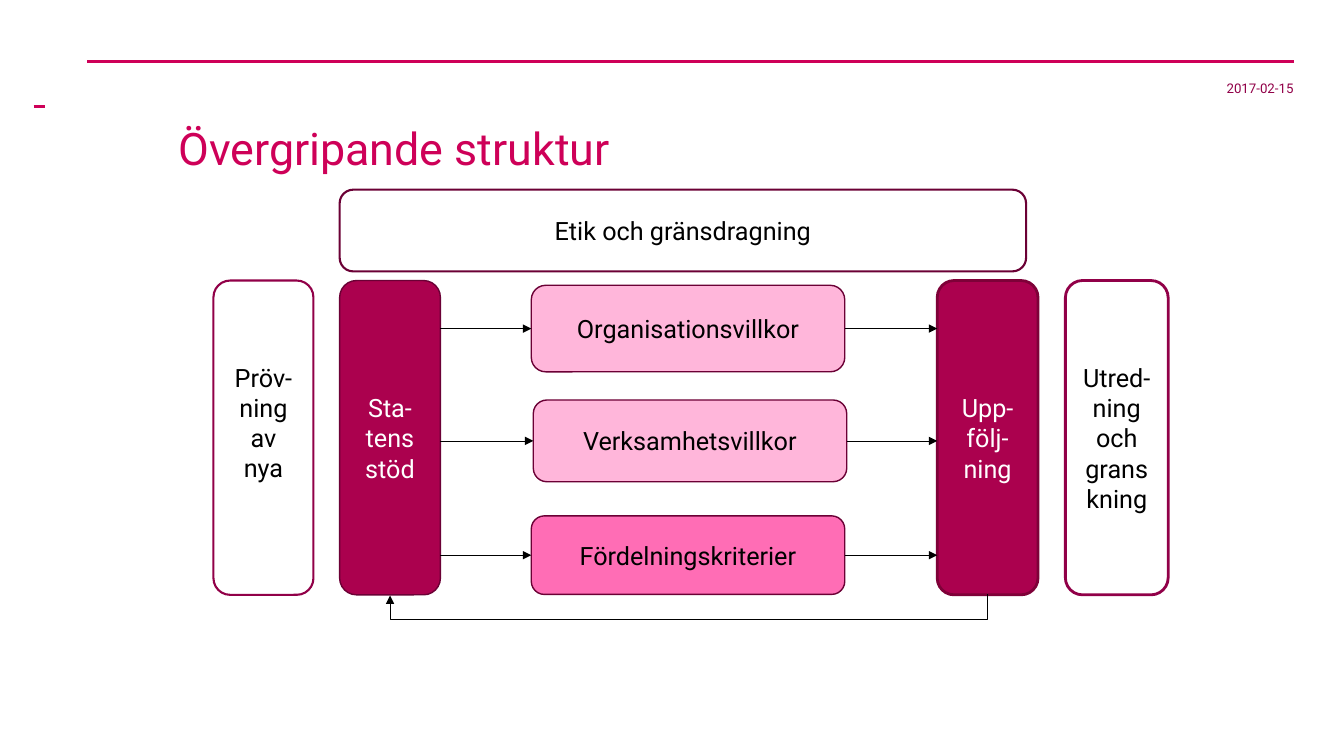
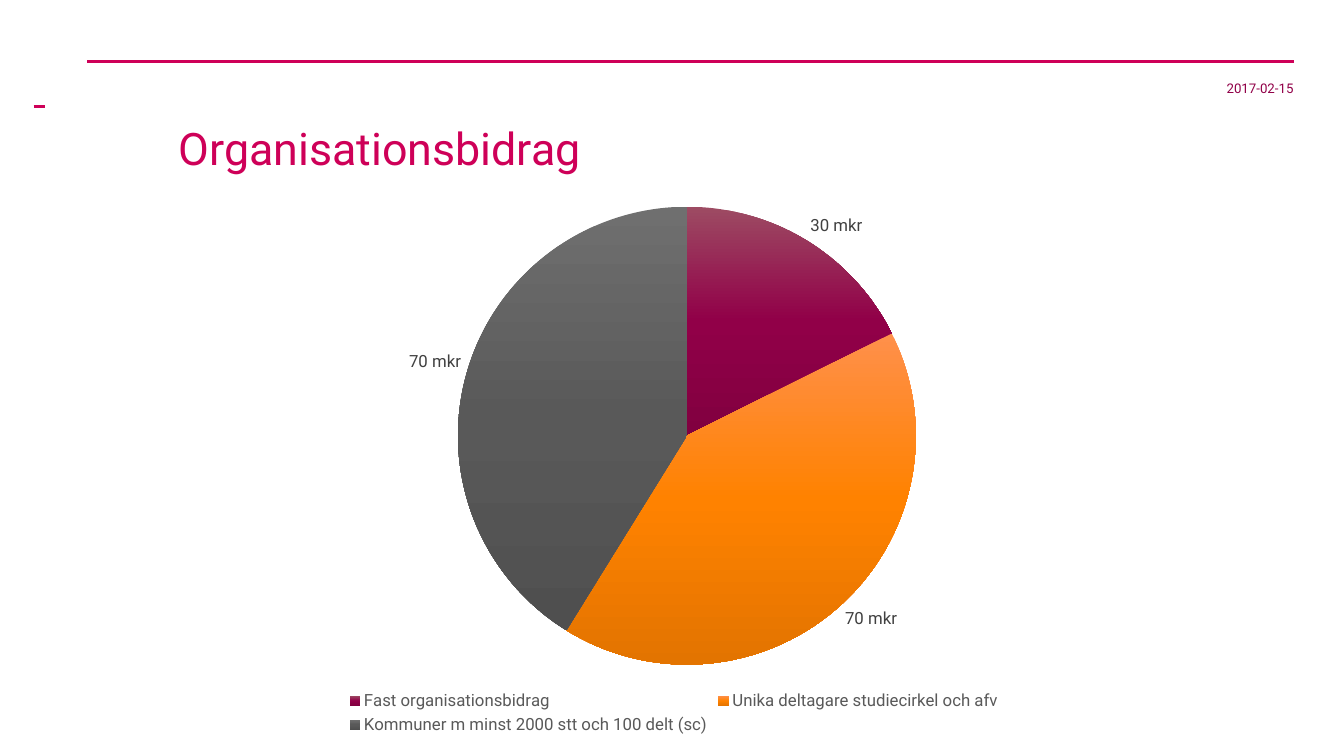
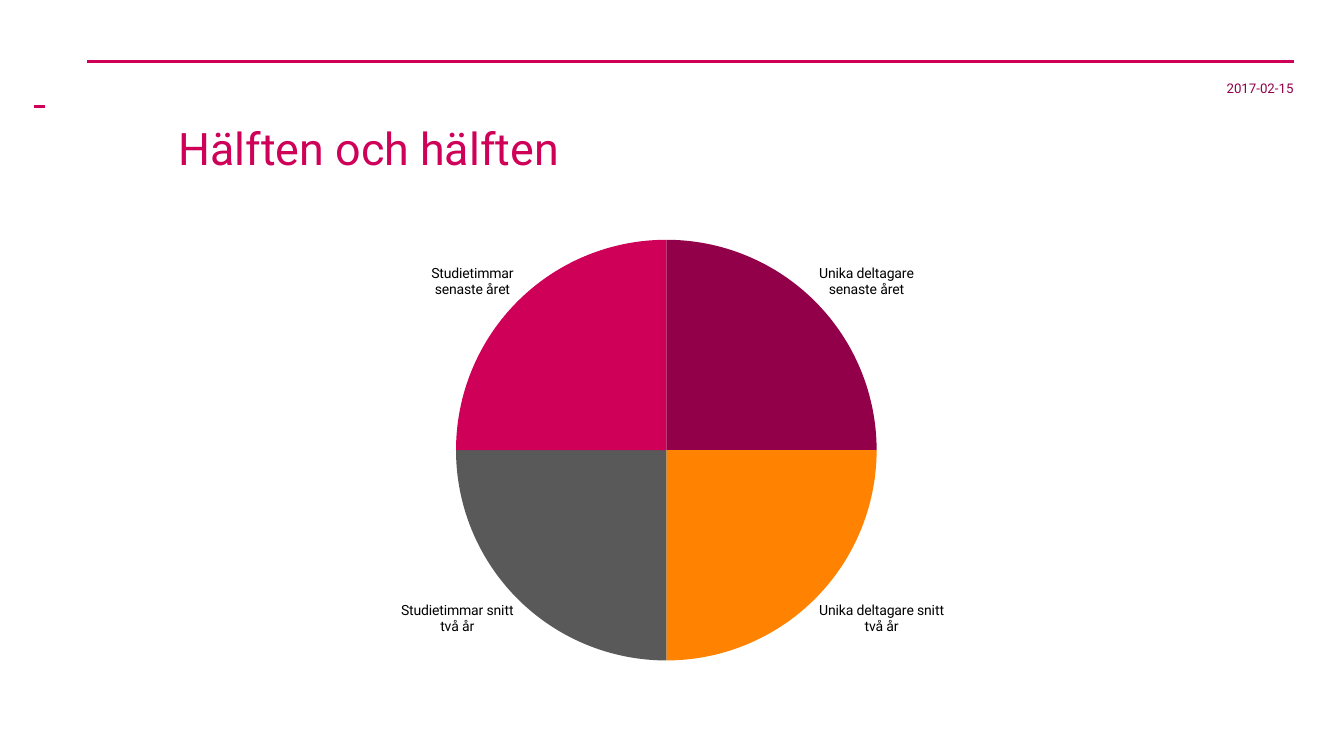
from copy import deepcopy
from lxml.etree import SubElement
from pptx import Presentation
from pptx.chart.data import CategoryChartData
from pptx.dml.color import RGBColor
from pptx.enum.chart import XL_CHART_TYPE as ChartType, XL_LABEL_POSITION as LabelPosition
from pptx.enum.chart import XL_LEGEND_POSITION as LegendPosition
from pptx.enum.shapes import MSO_CONNECTOR as Connector, MSO_SHAPE as Shape
from pptx.enum.text import MSO_ANCHOR as Anchor, MSO_AUTO_SIZE as AutoSize, PP_ALIGN as Align
from pptx.oxml.ns import qn
from pptx.util import Cm, Pt

FONT = "Roboto"
DATE = "2017-02-15"
TITLES = ["Övergripande struktur", "Organisationsbidrag", "Hälften och hälften"]
COLORS = {
    "pink": "CE0058", "plum": "910048", "wine": "AB014E", "dark": "6B0035", "berry": "7E0138",
    "light": "FFB6DA", "rose": "FF6DB5", "white": "FFFFFF", "black": "000000",
    "orange": "FF8200", "gray": "595959", "label": "404040",
    "plum top": "9D4B63", "plum end": "810040", "orange top": "FF904B", "orange end": "E37400",
    "gray top": "6F6F6F", "gray end": "4F4F4F",
}
TOP, TALL = 7.07, 7.92
BOXES = {
    "trial": (["Pröv-ning", "av", "nya"], (5.38, TOP, 2.52, TALL), "white", "plum", 1.5, "black"),
    "support": (["Sta-tens", "stöd"], (8.56, TOP, 2.54, TALL), "wine", "dark", 1, "white"),
    "organisation": (["Organisationsvillkor"], (13.39, 7.19, 7.9, 2.18), "light", "dark", 1, "black"),
    "activity": (["Verksamhetsvillkor"], (13.44, 10.08, 7.9, 2.06), "light", "dark", 1, "black"),
    "criteria": (["Fördelningskriterier"], (13.39, 13, 7.9, 1.98), "rose", "dark", 1, "black"),
    "follow-up": (["Upp-följ-", "ning"], (23.62, TOP, 2.54, TALL), "wine", "berry", 2, "white"),
    "review": (["Utred-ning", "och", "granskning"], (26.85, TOP, 2.59, TALL), "white", "plum", 2, "black"),
    "ethics": (["Etik och gränsdragning"], (8.56, 4.78, 17.3, 2.06), "white", "dark", 1.5, "black"),
}
GRANTS = [
    ("Fast organisationsbidrag", 30, ["plum top", "plum", "plum end"]),
    ("Unika deltagare studiecirkel och afv", 70, ["orange top", "orange", "orange end"]),
    ("Kommuner m minst 2000 stt och 100 delt (sc)", 70, ["gray top", "gray", "gray end"]),
]
HALVES = [
    ("Unika deltagare senaste året", 25, ["plum"]),
    ("Unika deltagare snitt två år", 25, ["orange"]),
    ("Studietimmar snitt två år", 25, ["gray"]),
    ("Studietimmar senaste året", 25, ["pink"]),
]


def rgb(name):
    return RGBColor.from_string(COLORS[name])


def set_font(font, size, color):
    font.name, font.size, font.bold = FONT, Pt(size), False
    font.color.rgb = rgb(color)


def write(frame, lines, size=18, color="black", align=Align.CENTER, anchor=Anchor.MIDDLE, inset=None, spacing=None):
    frame.word_wrap, frame.auto_size, frame.vertical_anchor = True, AutoSize.NONE, anchor
    if inset is not None:
        frame.margin_left = frame.margin_right = frame.margin_top = frame.margin_bottom = inset
    for index, line in enumerate(lines):
        para = frame.add_paragraph() if index else frame.paragraphs[0]
        para.alignment, para.line_spacing = align, spacing
        span = para.add_run()
        span.text = line
        set_font(span.font, size, color)


def add_line(page, start, end, color, width, kind=Connector.STRAIGHT, arrow=False):
    line = page.shapes.add_connector(kind, *start, *end)
    line.line.color.rgb, line.line.width = rgb(color), Pt(width)
    if arrow:
        SubElement(line.line._get_or_add_ln(), qn("a:tailEnd"), type="triangle")
    SubElement(line.element.spPr, qn("a:effectLst"))
    return line


def add_page(deck, layout, title):
    page = deck.slides.add_slide(layout)
    head = page.shapes.title
    head.left, head.top, head.width, head.height = Cm(4.5), Cm(3.2), Cm(28.1), Cm(1.45)
    write(head.text_frame, [title], size=32, color="pink", align=Align.LEFT, anchor=Anchor.TOP, inset=0, spacing=0.9)
    date = page.shapes.add_textbox(Cm(29.6), Cm(1.78), Cm(3), Cm(0.9))
    write(date.text_frame, [DATE], size=9.5, color="plum", align=Align.RIGHT, inset=0)
    return page


def add_rules(page, layout):
    for left, right, top in [(2.2, 32.6, 1.55), (0.85, 1.14, 2.69)]:
        rule = add_line(page, (Cm(left), Cm(top)), (Cm(right), Cm(top)), "pink", 2.25)
        layout.shapes._spTree.append(rule.element)


def add_box(page, lines, place, fill, outline, width, color):
    box = page.shapes.add_shape(Shape.ROUNDED_RECTANGLE, *map(Cm, place))
    box.shadow.inherit = False
    box.fill.solid()
    box.fill.fore_color.rgb = rgb(fill)
    box.line.color.rgb, box.line.width = rgb(outline), Pt(width)
    write(box.text_frame, lines, color=color)
    return box


def add_flow(page):
    boxes = {name: add_box(page, *details) for name, details in BOXES.items()}
    boxes["trial"].text_frame.margin_bottom = Cm(0.9)
    support, follow = boxes["support"], boxes["follow-up"]
    for name in ["organisation", "activity", "criteria"]:
        box = boxes[name]
        middle = box.top + box.height // 2
        arrow = add_line(page, (support.left + support.width, middle), (box.left, middle), "black", 0.5, arrow=True)
        arrow.end_connect(box, 1)
        arrow = add_line(page, (box.left + box.width, middle), (follow.left, middle), "black", 0.5, arrow=True)
        arrow.begin_connect(box, 3)
    add_return(page, follow, support)


def add_return(page, source, target):
    loop = add_line(page, (0, 0), (1, 1), "black", 0.5, kind=Connector.ELBOW, arrow=True)
    loop.begin_connect(source, 2)
    loop.end_connect(target, 2)
    first, last = (box.left + box.width // 2 for box in (source, target))
    bottom, depth = source.top + source.height, Cm(0.63)
    loop.width, loop.height = Cm(0.03), first - last
    loop.left = (first + last - loop.width) // 2
    loop.top = bottom - loop.height // 2
    frame = loop.element.spPr.find(qn("a:xfrm"))
    for flip in ("flipH", "flipV"):
        frame.attrib.pop(flip, None)
    frame.set("rot", "5400000")
    guides = loop.element.spPr.find(qn("a:prstGeom")).get_or_add_avLst()
    SubElement(guides, qn("a:gd"), name="adj1", fmla=f"val {depth * 100000 // loop.width}")


def fill_slice(chart, fill, colors):
    if len(colors) == 1:
        fill.solid()
        fill.fore_color.rgb = rgb(colors[0])
        return
    fill.gradient()
    fill.gradient_angle = 270
    stops = chart._chartSpace.findall(".//" + qn("a:gsLst"))[-1]
    stops.insert(1, deepcopy(stops[0]))
    for index, (stop, color) in enumerate(zip(fill.gradient_stops, colors)):
        stop.color.rgb, stop.position = rgb(color), index / 2


def add_pie(page, rows, place, plot, size, color, legend=False):
    data = CategoryChartData()
    data.categories = [name for name, value, colors in rows]
    data.add_series("Series 1", [value for name, value, colors in rows])
    chart = page.shapes.add_chart(ChartType.PIE, *map(Cm, place), data).chart
    set_font(chart.font, 10, "black")
    chart.has_title, chart.has_legend = False, legend
    if legend:
        chart.legend.position, chart.legend.include_in_layout = LegendPosition.BOTTOM, False
        set_font(chart.legend.font, 12, "gray")
    pie = chart.plots[0]
    pie.vary_by_categories = True
    for index, (name, value, colors) in enumerate(rows):
        point = pie.series[0].points[index].format
        fill_slice(chart, point.fill, colors)
        point.line.fill.background()
    pie.has_data_labels = True
    labels = pie.data_labels
    labels.show_percentage = False
    labels.show_value, labels.show_category_name = legend, not legend
    labels.number_format, labels.number_format_is_linked = '0" mkr"', False
    labels.position = LabelPosition.OUTSIDE_END
    set_font(labels.font, size, color)
    area = chart._chartSpace.chart.plotArea
    for old in area.findall(qn("c:layout")):
        area.remove(old)
    layout = SubElement(area, qn("c:layout"))
    area.insert(0, layout)
    manual = SubElement(layout, qn("c:manualLayout"))
    settings = [("layoutTarget", "inner"), ("xMode", "edge"), ("yMode", "edge"), *zip("xywh", plot)]
    for key, value in settings:
        SubElement(manual, qn(f"c:{key}"), val=str(value))


def main():
    deck = Presentation()
    deck.slide_width, deck.slide_height = Cm(33.87), Cm(19.05)
    layout = deck.slide_layouts[5]
    structure, grants, halves = [add_page(deck, layout, title) for title in TITLES]
    add_rules(structure, layout)
    add_flow(structure)
    add_pie(grants, GRANTS, (6.1, 4.6, 21.77, 14.02), (0.25, 0.04, 0.53, 0.83), 12, "label", legend=True)
    add_pie(halves, HALVES, (8.23, 5.16, 16.31, 12.37), (0.2, 0.07, 0.65, 0.86), 10, "black")
    deck.save("out.pptx")


if __name__ == "__main__":
    main()
